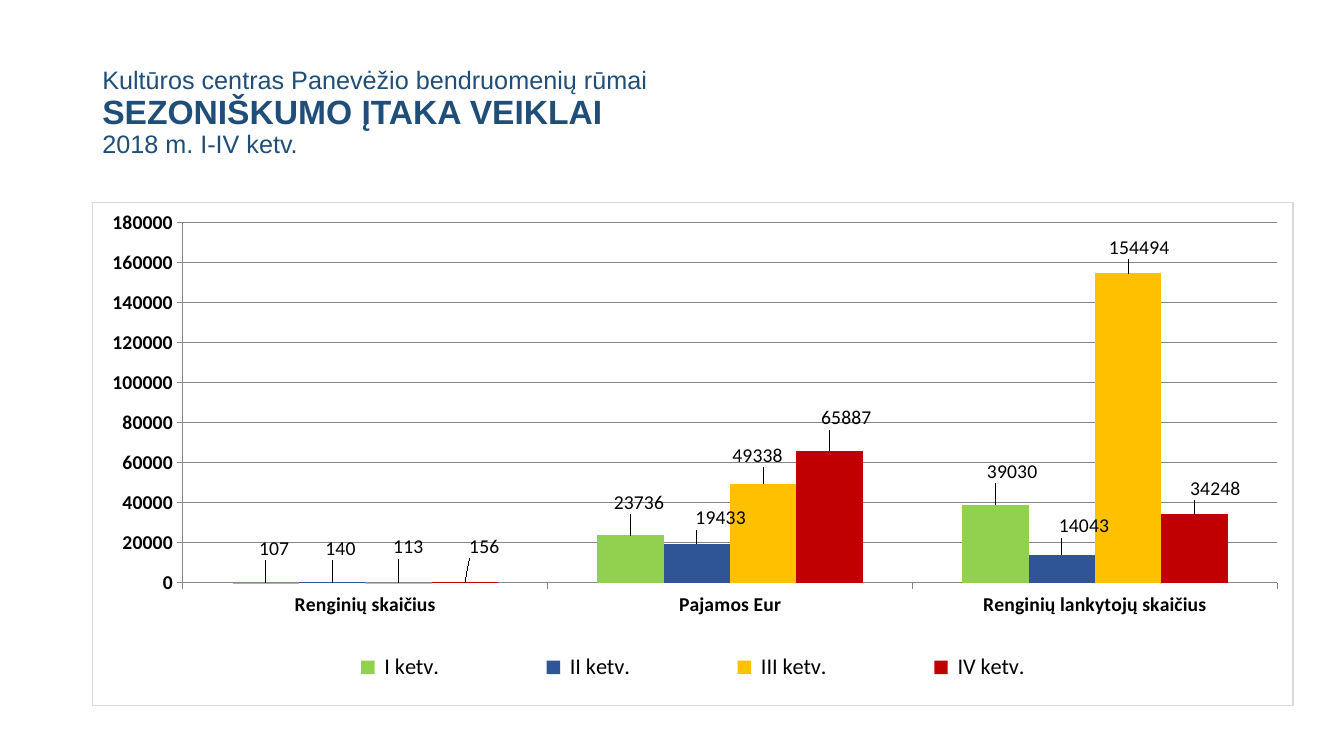
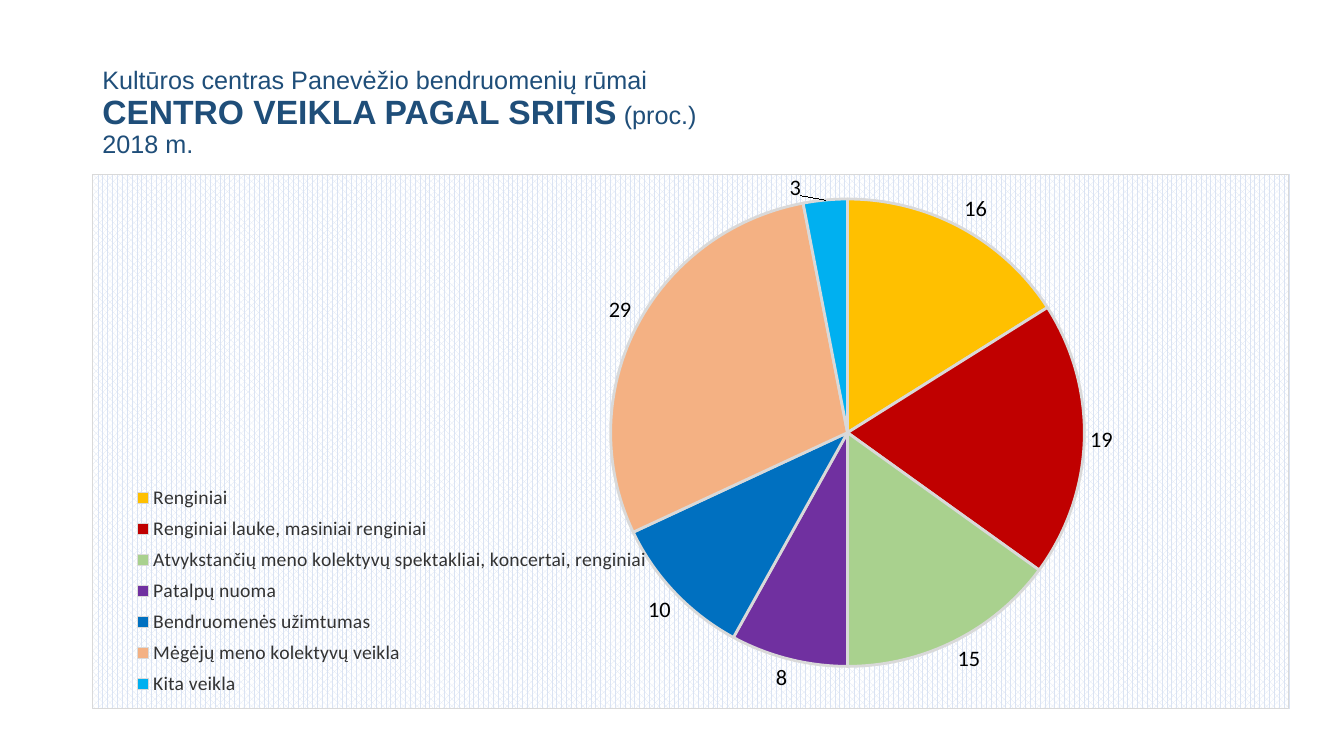
from dataclasses import dataclass

from lxml import etree
from pptx import Presentation
from pptx.chart.data import CategoryChartData
from pptx.dml.color import RGBColor
from pptx.enum.chart import XL_CHART_TYPE, XL_LABEL_POSITION, XL_LEGEND_POSITION, XL_TICK_MARK
from pptx.enum.text import MSO_ANCHOR
from pptx.oxml import parse_xml
from pptx.oxml.ns import nsdecls, qn
from pptx.util import Pt

COLUMN = XL_CHART_TYPE.COLUMN_CLUSTERED
PIE = XL_CHART_TYPE.PIE
OUTSIDE_END = XL_LABEL_POSITION.OUTSIDE_END
BOTTOM = XL_LEGEND_POSITION.BOTTOM
TICK_OUTSIDE = XL_TICK_MARK.OUTSIDE
MIDDLE = MSO_ANCHOR.MIDDLE


@dataclass(frozen=True)
class Theme:
    title_font: str = "Arial"
    chart_font: str = "Calibri"
    title: str = "1F4E79"
    ink: str = "000000"
    legend_ink: str = "333333"
    grid: str = "878787"
    border: str = "D9D9D9"
    pattern: str = "DAE3F3"
    paper: str = "FFFFFF"
    heading: int = 24
    subheading: int = 18
    large: int = 16
    medium: int = 14
    small: int = 10


THEME = Theme()
SLIDE_SIZE = (960, 540)
TITLE_FRAME = (66, 29, 828, 104)
CENTRE = "Kultūros centras Panevėžio bendruomenių rūmai"

SEASONS = {
    "title": ("SEZONIŠKUMO ĮTAKA VEIKLAI", "", "2018 m. I-IV ketv."),
    "frame": (66, 144, 858, 360),
    "plot": (0.075, 0.04, 0.912, 0.717),
    "legend": (0.14, 0.87, 0.72, 0.11),
    "categories": ["Renginių skaičius", "Pajamos Eur", "Renginių lankytojų skaičius"],
    "series": [
        (" I ketv.", (107, 23736, 39030), "92D050", ((6, -13), (6, -12), (12, -12))),
        (" II ketv.", (140, 19433, 14043), "2F5597", ((6, -13), (17, -7), (16, -9))),
        (" III ketv.", (113, 49338, 154494), "FFC000", ((7, -14), (-4, -9), (8, -7))),
        (" IV ketv.", (156, 65887, 34248), "C00000", ((14, -14), (12, -12), (15, -7))),
    ],
}

ACTIVITIES = {
    "title": ("CENTRO VEIKLA PAGAL SRITIS", " (proc.)", "2018 m."),
    "frame": (66, 119.5, 855, 387),
    "plot": (0.262, 0.046, 0.738, 0.875),
    "legend": (0.02, 0.57, 0.46, 0.42),
    "slices": [
        ("Renginiai", 16, "FFC000"),
        ("Renginiai lauke, masiniai renginiai", 19, "C00000"),
        ("Atvykstančių meno kolektyvų spektakliai, koncertai, renginiai", 15, "A9D18E"),
        ("Patalpų nuoma", 8, "7030A0"),
        ("Bendruomenės užimtumas", 10, "0070C0"),
        ("Mėgėjų meno kolektyvų veikla", 29, "F4B183"),
        ("Kita veikla", 3, "00B0F0"),
    ],
    "last_label_shift": (-17, 1),
}


def style_font(font, size, color, name=THEME.chart_font, bold=False):
    font.name = name
    font.size = Pt(size)
    font.bold = bold
    font.color.rgb = RGBColor.from_string(color)


def set_layout(parent, index, values, edge=True, inner=False):
    for old in parent.findall(qn("c:layout")):
        parent.remove(old)
    layout = parse_xml(f"<c:layout {nsdecls('c')}><c:manualLayout/></c:layout>")
    settings = [("layoutTarget", "inner")] if inner else []
    if edge:
        settings += [("xMode", "edge"), ("yMode", "edge")]
    settings += zip("xywh", values)
    for tag, value in settings:
        etree.SubElement(layout[0], qn(f"c:{tag}")).set("val", str(value))
    parent.insert(index, layout)


def add_title(slide, heading, suffix, period):
    box = slide.shapes.add_textbox(*map(Pt, TITLE_FRAME))
    frame = box.text_frame
    frame.word_wrap = True
    frame.vertical_anchor = MIDDLE
    lines = [[(CENTRE, False)], [(heading, True), (suffix, False)], [(period, False)]]
    for number, line in enumerate(lines):
        para = frame.add_paragraph() if number else frame.paragraphs[0]
        para.line_spacing = 0.9
        for text, strong in line:
            if text:
                span = para.add_run()
                span.text = text
                size = THEME.heading if strong else THEME.subheading
                style_font(span.font, size, THEME.title, THEME.title_font, strong)


def add_chart(slide, kind, content, data, fill, legend_size, legend_color):
    chart = slide.shapes.add_chart(kind, *map(Pt, content["frame"]), data).chart
    chart.has_title = False
    style_font(chart.font, THEME.small, THEME.ink)
    chart.has_legend = True
    legend = chart.legend
    legend.position = BOTTOM
    legend.include_in_layout = False
    style_font(legend.font, legend_size, legend_color)
    set_layout(legend._element, 1, content["legend"])
    space = chart._chartSpace
    body = space.find(qn("c:chart"))
    set_layout(body.find(qn("c:plotArea")), 0, content["plot"], inner=True)
    body.addnext(parse_xml(
        f'<c:spPr {nsdecls("c", "a")}>{fill}<a:ln w="{Pt(0.75)}"><a:solidFill>'
        f'<a:srgbClr val="{THEME.border}"/></a:solidFill></a:ln></c:spPr>'))
    return chart


def label_series(series, size):
    labels = series.data_labels
    labels.show_value = True
    labels.number_format = "0"
    labels.number_format_is_linked = False
    labels.position = OUTSIDE_END
    style_font(labels.font, size, THEME.ink)


def shift_label(series, index, shift, frame, size):
    label = series.points[index].data_label
    label.position = OUTSIDE_END
    style_font(label.font, size, THEME.ink)
    element = series._element.xpath(f"c:dLbls/c:dLbl[c:idx/@val='{index}']")[0]
    offsets = [round(move / length, 4) for move, length in zip(shift, frame[2:])]
    set_layout(element, 1, offsets, edge=False)


def style_axis(axis):
    axis.major_tick_mark = TICK_OUTSIDE
    axis.format.line.color.rgb = RGBColor.from_string(THEME.grid)
    style_font(axis.tick_labels.font, THEME.medium, THEME.ink, bold=True)


def build_seasons(slide, content):
    add_title(slide, *content["title"])
    data = CategoryChartData()
    data.categories = content["categories"]
    for name, values, _, _ in content["series"]:
        data.add_series(name, values)
    chart = add_chart(slide, COLUMN, content, data, "<a:noFill/>", THEME.large, THEME.ink)
    plot = chart.plots[0]
    plot.gap_width = 150
    plot.overlap = 0
    plot.vary_by_categories = False
    for series, (_, _, color, shifts) in zip(plot.series, content["series"]):
        series.format.fill.solid()
        series.format.fill.fore_color.rgb = RGBColor.from_string(color)
        label_series(series, THEME.medium)
        for index, shift in enumerate(shifts):
            shift_label(series, index, shift, content["frame"], THEME.medium)
    style_axis(chart.category_axis)
    axis = chart.value_axis
    style_axis(axis)
    axis.minimum_scale = 0
    axis.maximum_scale = 180000
    axis.major_unit = 20000
    axis.tick_labels.number_format = "0"
    axis.tick_labels.number_format_is_linked = False
    axis.has_major_gridlines = True
    axis.major_gridlines.format.line.color.rgb = RGBColor.from_string(THEME.grid)


def build_activities(slide, content):
    add_title(slide, *content["title"])
    names, values, colors = zip(*content["slices"])
    data = CategoryChartData()
    data.categories = names
    data.add_series("Series 1", values)
    fill = (f'<a:pattFill prst="pct70"><a:fgClr><a:srgbClr val="{THEME.pattern}"/></a:fgClr>'
            f'<a:bgClr><a:srgbClr val="{THEME.paper}"/></a:bgClr></a:pattFill>')
    chart = add_chart(slide, PIE, content, data, fill, THEME.medium, THEME.legend_ink)
    plot = chart.plots[0]
    plot.vary_by_categories = True
    series = plot.series[0]
    for index, color in enumerate(colors):
        look = series.points[index].format
        look.fill.solid()
        look.fill.fore_color.rgb = RGBColor.from_string(color)
        look.line.color.rgb = RGBColor.from_string(THEME.border)
        look.line.width = Pt(2)
    label_series(series, THEME.large)
    shift_label(series, len(names) - 1, content["last_label_shift"], content["frame"], THEME.large)


def main():
    deck = Presentation()
    deck.slide_width, deck.slide_height = map(Pt, SLIDE_SIZE)
    blank = deck.slide_layouts[6]
    for build, content in ((build_seasons, SEASONS), (build_activities, ACTIVITIES)):
        build(deck.slides.add_slide(blank), content)
    deck.save("out.pptx")


if __name__ == "__main__":
    main()
